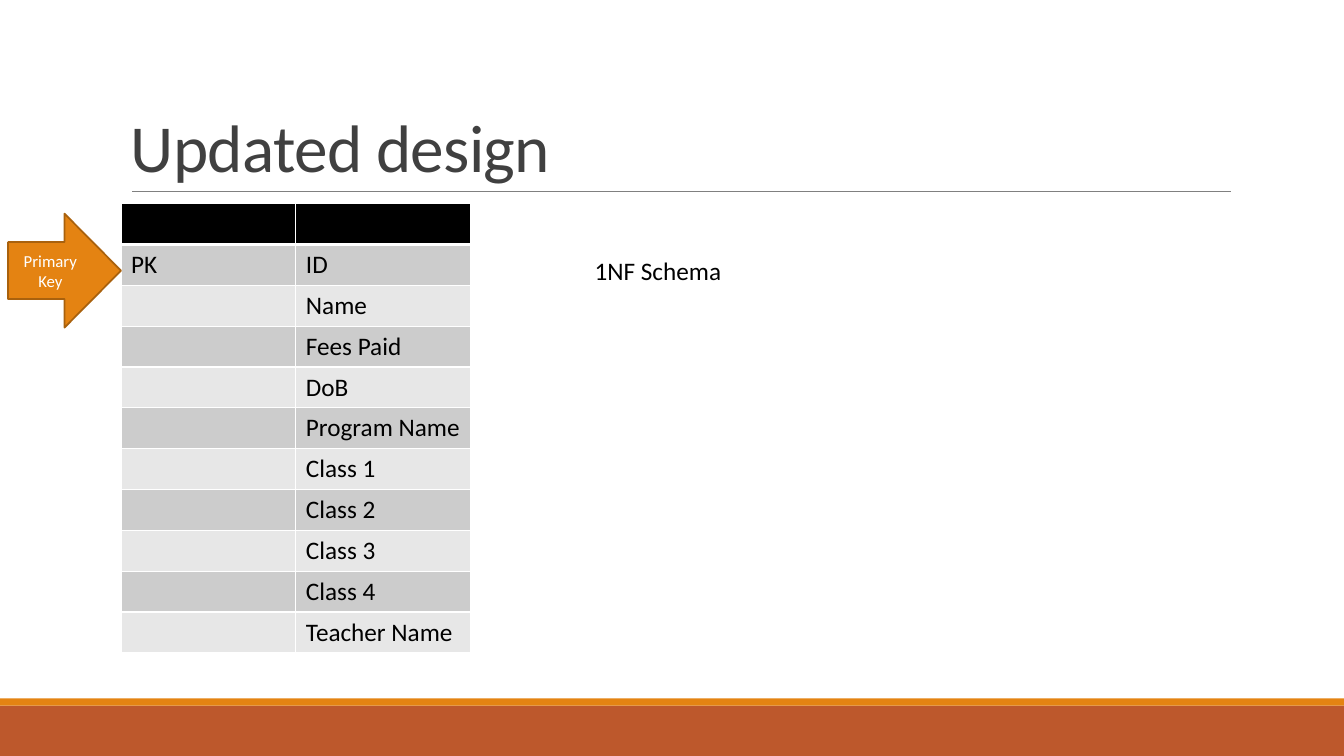
import pptx
import pptx.dml.color
import pptx.enum.shapes
import pptx.enum.text
import pptx.oxml
import pptx.oxml.ns
import pptx.util
from lxml import etree
from pptx.util import Inches

FONT = "Calibri"
FIELDS = ["ID", "Name", "Fees Paid", "DoB", "Program Name", "Class 1",
          "Class 2", "Class 3", "Class 4", "Teacher Name"]


def color(value):
    return pptx.dml.color.RGBColor.from_string(value)


def add_run(paragraph, text, size, font_color):
    run = paragraph.add_run()
    run.text = text
    run.font.name = FONT
    run.font.size = pptx.util.Pt(size)
    run.font.color.rgb = color(font_color)
    return run


def add_filled_shape(slide, kind, left, top, width, height, fill, outline=None):
    shape = slide.shapes.add_shape(
        kind, Inches(left), Inches(top), Inches(width), Inches(height))
    shape.shadow.inherit = False
    shape.fill.solid()
    shape.fill.fore_color.rgb = color(fill)
    if outline:
        shape.line.color.rgb = color(outline)
        shape.line.width = pptx.util.Pt(1.25)
    else:
        shape.line.fill.background()
    return shape


def add_rule(slide, left, right, y):
    rule = slide.shapes.add_connector(
        pptx.enum.shapes.MSO_CONNECTOR.STRAIGHT,
        Inches(left), Inches(y), Inches(right), Inches(y))
    rule.line.color.rgb = color("808080")
    rule.line.width = pptx.util.Pt(0.5)
    properties = rule.element.find(pptx.oxml.ns.qn("p:spPr"))
    etree.SubElement(properties, pptx.oxml.ns.qn("a:effectLst"))


def add_text(slide, text, left, top, width, height, size, font_color):
    box = slide.shapes.add_textbox(
        Inches(left), Inches(top), Inches(width), Inches(height))
    box.text_frame.word_wrap = True
    add_run(box.text_frame.paragraphs[0], text, size, font_color)
    return box


def add_title(slide, text):
    frame = add_text(slide, text, 1.2, 0.31, 11, 1.59, 48, "404040").text_frame
    frame.vertical_anchor = pptx.enum.text.MSO_ANCHOR.BOTTOM
    paragraph = frame.paragraphs[0]
    paragraph.line_spacing = 0.85
    paragraph.runs[0].font._element.set("spc", "-50")


def set_borders(cell, top, bottom):
    """Draw white borders; top and bottom are widths in points."""
    properties = cell._tc.get_or_add_tcPr()
    for side, width in (("L", 1), ("R", 1), ("T", top), ("B", bottom)):
        properties.append(pptx.oxml.parse_xml(
            f'<a:ln{side} {pptx.oxml.ns.nsdecls("a")} w="{pptx.util.Pt(width)}">'
            '<a:solidFill><a:srgbClr val="FFFFFF"/></a:solidFill>'
            f'</a:ln{side}>'))


def add_schema_table(slide, rows, left, top, column_width, row_height):
    """Add a table whose first row is a black header over grey bands."""
    columns = len(rows[0])
    table = slide.shapes.add_table(
        len(rows), columns, Inches(left), Inches(top),
        Inches(column_width * columns), Inches(row_height * len(rows))).table
    for column in table.columns:
        column.width = Inches(column_width)
    for row_index, row in enumerate(rows):
        table.rows[row_index].height = Inches(row_height)
        band = ("E7E7E7", "CCCCCC")[row_index % 2] if row_index else "000000"
        for column_index, text in enumerate(row):
            cell = table.cell(row_index, column_index)
            set_borders(cell, 3 if row_index == 1 else 1, 1 if row_index else 3)
            cell.fill.solid()
            cell.fill.fore_color.rgb = color(band)
            if text:
                add_run(cell.text_frame.paragraphs[0], text, 18, "000000")


def add_key_arrow(slide, text):
    arrow = add_filled_shape(
        slide, pptx.enum.shapes.MSO_SHAPE.RIGHT_ARROW,
        0.08, 2.12, 1.12, 1.13, "E48312", "A9610D")
    frame = arrow.text_frame
    frame.word_wrap = True
    frame.vertical_anchor = pptx.enum.text.MSO_ANCHOR.MIDDLE
    paragraph = frame.paragraphs[0]
    paragraph.alignment = pptx.enum.text.PP_ALIGN.CENTER
    add_run(paragraph, text, 12, "FFFFFF")


def main():
    presentation = pptx.Presentation()
    presentation.slide_width = Inches(13.33)
    presentation.slide_height = Inches(7.5)
    slide = presentation.slides.add_slide(presentation.slide_layouts[6])

    rectangle = pptx.enum.shapes.MSO_SHAPE.RECTANGLE
    add_filled_shape(slide, rectangle, 0, 7, 13.33, 0.5, "BD582C")
    add_filled_shape(slide, rectangle, 0, 6.93, 13.33, 0.07, "E48312")
    add_rule(slide, 1.31, 12.21, 1.9)
    add_title(slide, "Updated design")

    rows = [("", "")] + [("PK" if field == "ID" else "", field) for field in FIELDS]
    add_schema_table(slide, rows, 1.2, 2.02, 1.735, 4.46 / len(rows))
    add_text(slide, "1NF Schema", 5.8, 2.48, 4.5, 0.4, 18, "000000")
    add_key_arrow(slide, "Primary Key")
    presentation.save("out.pptx")


if __name__ == "__main__":
    main()
